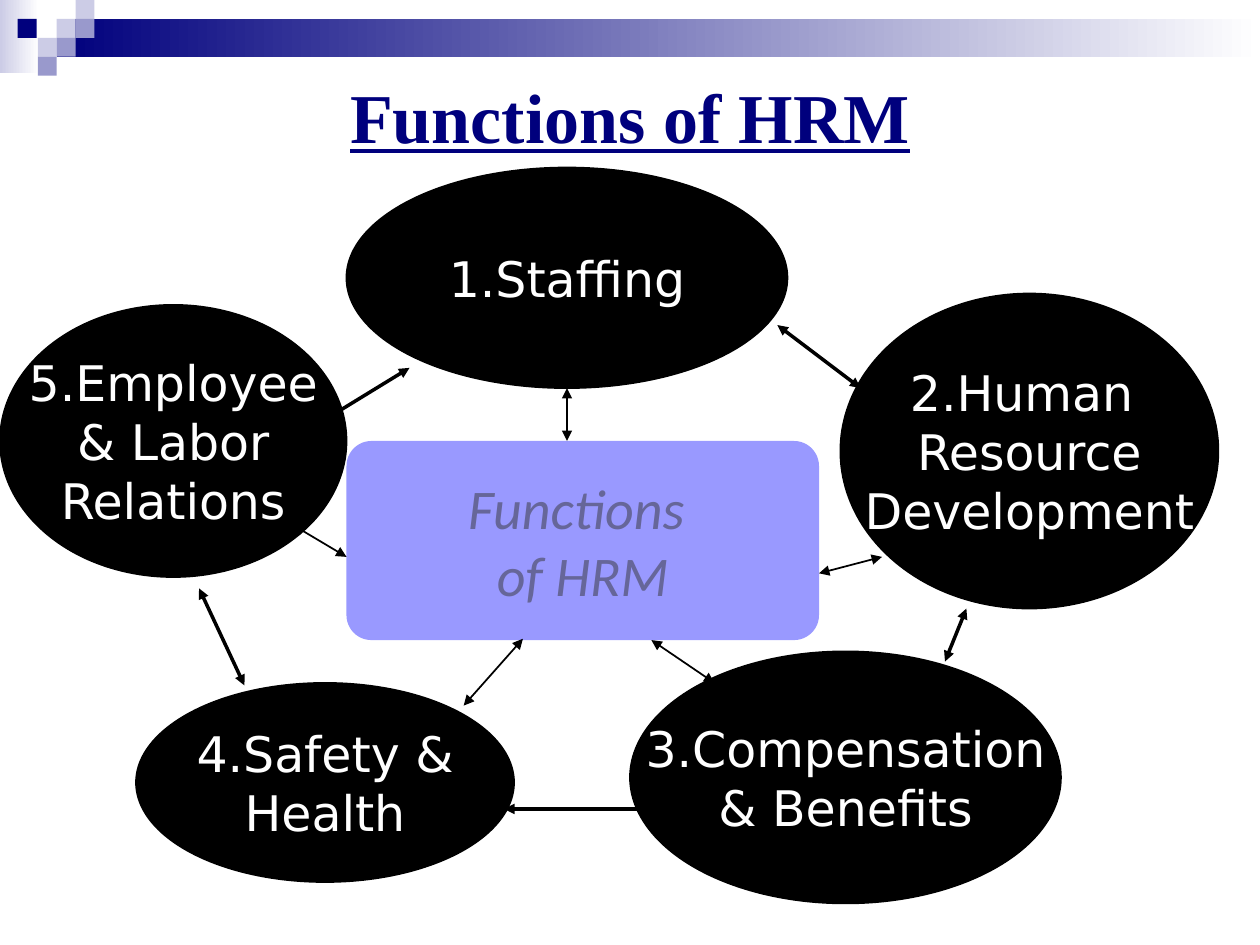
import pptx
import pptx.util
from dataclasses import dataclass
from pptx.dml.color import RGBColor
from pptx.enum.shapes import MSO_CONNECTOR, MSO_SHAPE
from pptx.enum.text import MSO_ANCHOR, MSO_AUTO_SIZE, PP_ALIGN
from pptx.oxml.ns import qn
from pptx.util import Inches, Pt
from lxml import etree


@dataclass(frozen=True)
class Theme:
    navy: str = "00007D"
    lilac: str = "CCCCE6"
    violet: str = "9999CC"
    hub: str = "9999FF"
    hub_text: str = "666699"
    black: str = "000000"
    white: str = "FFFFFF"
    title_font: str = "Times New Roman"
    hub_font: str = "Calibri"
    oval_font: str = "DejaVu Sans"
    title_size: int = 40
    hub_size: int = 32
    oval_size: int = 28


T = Theme()


def rgb(color):
    return RGBColor.from_string(color)


def add_text(p, text, font, size, color):
    p.alignment = PP_ALIGN.CENTER
    r = p.add_run()
    r.text = text
    r.font.name, r.font.size = font, Pt(size)
    r.font.color.rgb = rgb(color)
    return r


def add_shape(s, kind, box, color, outlined=False):
    sp = s.shapes.add_shape(kind, *map(Inches, box))
    sp.shadow.inherit = False
    sp.fill.solid()
    sp.fill.fore_color.rgb = rgb(color)
    if outlined:
        sp.line.color.rgb = rgb(color)
        sp.line.width = Pt(1)
    else:
        sp.line.fill.background()
    return sp


def add_fade(s, box, color):
    sp = add_shape(s, MSO_SHAPE.RECTANGLE, box, color)
    sp.fill.gradient()
    sp.fill.gradient_angle = 0
    for stop, position, stop_color in zip(sp.fill.gradient_stops, (0, 1), (color, T.white)):
        stop.position = position
        stop.color.rgb = rgb(stop_color)


def add_lines(sp, lines, font, size, color, italic=False):
    tf = sp.text_frame
    tf.word_wrap = False
    tf.vertical_anchor = MSO_ANCHOR.MIDDLE
    for i, line in enumerate(lines):
        p = tf.add_paragraph() if i else tf.paragraphs[0]
        r = add_text(p, line, font, size, color)
        r.font.italic = italic


def add_oval(s, box, lines):
    sp = add_shape(s, MSO_SHAPE.OVAL, box, T.black, outlined=True)
    add_lines(sp, lines, T.oval_font, T.oval_size, T.white)


def add_hub(s, box, lines):
    sp = add_shape(s, MSO_SHAPE.ROUNDED_RECTANGLE, box, T.hub)
    sp.adjustments[0] = 0.125
    add_lines(sp, lines, T.hub_font, T.hub_size, T.hub_text, italic=True)


def add_arrow(s, ends, width):
    c = s.shapes.add_connector(MSO_CONNECTOR.STRAIGHT, *map(Inches, ends))
    c.line.color.rgb = rgb(T.black)
    c.line.width = Pt(width)
    ln = c.line._get_or_add_ln()
    for tag in ("a:headEnd", "a:tailEnd"):
        etree.SubElement(ln, qn(tag)).set("type", "triangle")
    etree.SubElement(c._element.spPr, qn("a:effectLst"))


def add_banner(s):
    add_fade(s, (0, 0, 0.31, 0.58), T.lilac)
    add_fade(s, (0.45, 0.15, 9.55, 0.3), T.navy)
    side = 0.15
    squares = [(0.45, 0.15, T.lilac), (0.6, 0, T.lilac), (0.6, 0.15, T.violet),
               (0.3, 0.3, T.lilac), (0.14, 0.15, T.navy),
               (0.45, 0.3, T.violet), (0.3, 0.45, T.violet)]
    for x, y, color in squares:
        add_shape(s, MSO_SHAPE.RECTANGLE, (x, y, side, side), color)


def set_title(s, text):
    sp = s.shapes.title
    sp.left, sp.top, sp.width, sp.height = map(Inches, (0, 0.25, 10, 1.33))
    tf = sp.text_frame
    tf.auto_size = MSO_AUTO_SIZE.NONE
    tf.word_wrap = True
    tf.vertical_anchor = MSO_ANCHOR.MIDDLE
    r = add_text(tf.paragraphs[0], text, T.title_font, T.title_size, T.navy)
    r.font.bold = r.font.underline = True


def main():
    prs = pptx.Presentation()
    prs.slide_width, prs.slide_height = Inches(10), Inches(7.5)
    s = prs.slides.add_slide(prs.slide_layouts[5])
    add_banner(s)
    set_title(s, "Functions of HRM")

    # Top function and central hub
    add_oval(s, (2.75, 1.33, 3.5, 1.75), ["1.Staffing"])
    add_hub(s, (2.75, 3.5, 3.75, 1.58), ["Functions ", "of HRM"])

    # Ring arrows whose ends are tucked under the ovals
    for ends in [(4, 6.42, 5.31, 6.42), (2.58, 3.33, 3.25, 2.92), (6.83, 3.08, 6.17, 2.58)]:
        add_arrow(s, ends, 2)

    # Remaining functions
    add_oval(s, (0, 2.42, 2.75, 2.16), ["5.Employee", "& Labor", "Relations"])
    add_oval(s, (1.08, 5.42, 3, 1.58), ["4.Safety &", "Health"])
    add_oval(s, (5, 5.17, 3.42, 2), ["3.Compensation", "& Benefits"])
    add_oval(s, (6.67, 2.33, 3, 2.5), ["2.Human ", "Resource", "Development"])

    # Ring arrows in front
    for ends in [(1.58, 4.67, 1.94, 5.44), (7.5, 5.25, 7.67, 4.83)]:
        add_arrow(s, ends, 2)

    # Spokes between the hub and each function
    for ends in [(3.68, 5.6, 4.15, 5.07), (4.5, 3.08, 4.5, 3.5), (7, 4.42, 6.5, 4.55),
                 (2.33, 4.17, 2.75, 4.42), (5.17, 5.08, 5.67, 5.42)]:
        add_arrow(s, ends, 1)

    prs.save("out.pptx")


if __name__ == "__main__":
    main()
